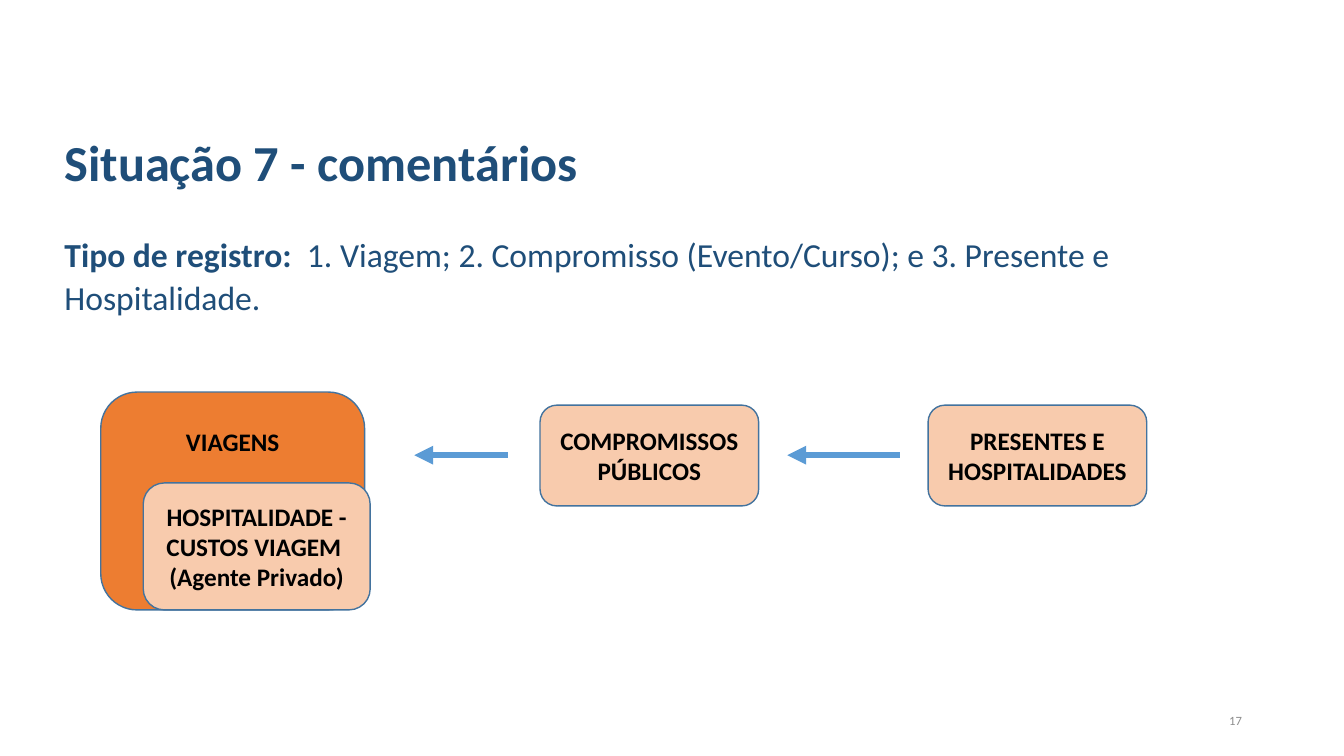
from lxml import etree
from pptx import Presentation
from pptx import util as u
from pptx.dml.color import RGBColor
from pptx.enum import shapes, text
from pptx.oxml.ns import qn

NAVY = RGBColor(0x1F, 0x4E, 0x79)
ORANGE = RGBColor(0xED, 0x7D, 0x31)
PEACH = RGBColor(0xF8, 0xCB, 0xAD)
OUTLINE = RGBColor(0x43, 0x73, 0x9E)
ARROW_BLUE = RGBColor(0x5B, 0x9B, 0xD5)
BLACK = RGBColor(0, 0, 0)
GREY = RGBColor(0x8C, 0x8C, 0x8C)


def add_span(para, wording, size, color, bold):
    span = para.add_run()
    span.text = wording
    span.font.name = "Calibri"
    span.font.size = u.Pt(size)
    span.font.bold = bold
    span.font.color.rgb = color


deck = Presentation()
deck.slide_width = u.Cm(33.87)
deck.slide_height = u.Cm(19.05)
page = deck.slides.add_slide(deck.slide_layouts[1])

title, body = page.placeholders
for holder, top, height in ((title, 3.05, 2.2), (body, 5.7, 3.4)):
    holder.left, holder.top = u.Cm(1.37), u.Cm(top)
    holder.width, holder.height = u.Cm(31.12), u.Cm(height)
    holder.text_frame.auto_size = text.MSO_AUTO_SIZE.NONE

title.text_frame.vertical_anchor = text.MSO_ANCHOR.MIDDLE
para = title.text_frame.paragraphs[0]
para.alignment = text.PP_ALIGN.LEFT
para.line_spacing = 0.9
add_span(para, "Situação 7 - comentários", 36, NAVY, True)

body.text_frame.vertical_anchor = text.MSO_ANCHOR.TOP
para = body.text_frame.paragraphs[0]
properties = para._p.get_or_add_pPr()
properties.set("marL", "0")
properties.set("indent", "0")
etree.SubElement(properties, qn("a:buNone"))
para.line_spacing = 1.07
para.space_before = u.Pt(0)
add_span(para, "Tipo de registro:  ", 24, NAVY, True)
add_span(para, "1. Viagem; 2. Compromisso (Evento/Curso); e 3. Presente e Hospitalidade.", 24, NAVY, False)

cards = (
    (["PRESENTES E HOSPITALIDADES"], 23.39, 10.21, 5.51, 2.54, PEACH),
    (["COMPROMISSOS", "PÚBLICOS"], 13.61, 10.21, 5.51, 2.54, PEACH),
    (["VIAGENS"], 2.54, 9.88, 6.65, 5.49, ORANGE),
    (["HOSPITALIDADE - CUSTOS VIAGEM  (Agente Privado)"], 3.61, 12.17, 5.72, 3.2, PEACH),
)
for lines, left, top, width, height, fill in cards:
    box = page.shapes.add_shape(
        shapes.MSO_SHAPE.ROUNDED_RECTANGLE, u.Cm(left), u.Cm(top), u.Cm(width), u.Cm(height))
    box.shadow.inherit = False
    box.fill.solid()
    box.fill.fore_color.rgb = fill
    box.line.color.rgb = OUTLINE
    box.line.width = u.Pt(1)
    frame = box.text_frame
    frame.word_wrap = True
    frame.vertical_anchor = text.MSO_ANCHOR.MIDDLE
    if fill == ORANGE:
        frame.vertical_anchor = text.MSO_ANCHOR.TOP
        frame.margin_top = u.Cm(0.6)
    for index, line in enumerate(lines):
        para = frame.add_paragraph() if index else frame.paragraphs[0]
        para.alignment = text.PP_ALIGN.CENTER
        add_span(para, line, 18, BLACK, True)

for start, end in ((12.8, 10.44), (22.68, 19.84)):
    arrow = page.shapes.add_connector(
        shapes.MSO_CONNECTOR.STRAIGHT, u.Cm(start), u.Cm(11.47), u.Cm(end), u.Cm(11.47))
    arrow.line.color.rgb = ARROW_BLUE
    arrow.line.width = u.Pt(4.5)
    etree.SubElement(arrow.line._get_or_add_ln(), qn("a:tailEnd"), type="triangle")
    etree.SubElement(arrow._element.spPr, qn("a:effectLst"))

number = page.shapes.add_textbox(u.Cm(23.93), u.Cm(17.65), u.Cm(7.62), u.Cm(1.02))
number.text_frame.word_wrap = True
number.text_frame.vertical_anchor = text.MSO_ANCHOR.MIDDLE
para = number.text_frame.paragraphs[0]
para.alignment = text.PP_ALIGN.RIGHT
add_span(para, "17", 9, GREY, False)

deck.save("out.pptx")
